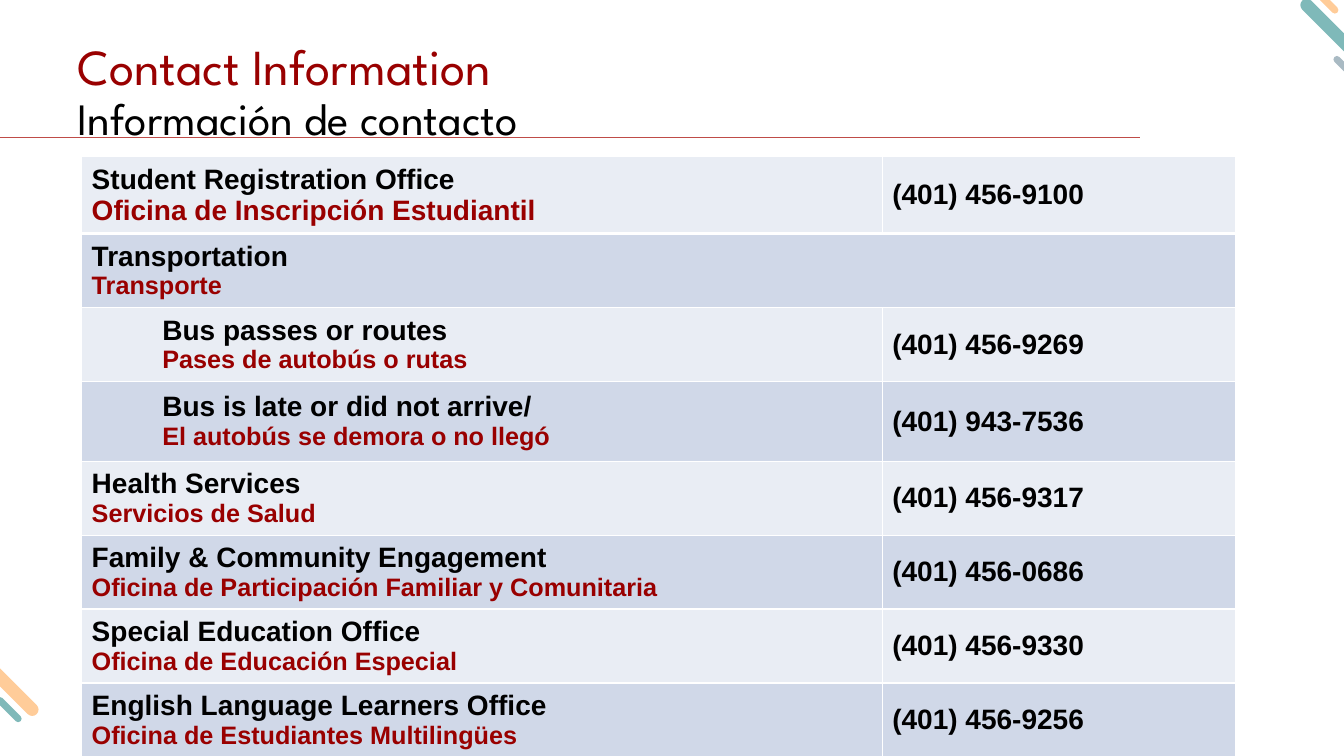
import pptx
import pptx.util
import pptx.dml.color
import pptx.enum.shapes
import pptx.enum.text
import pptx.oxml
import pptx.oxml.ns
from dataclasses import dataclass
from lxml import etree

Inches, Pt = pptx.util.Inches, pptx.util.Pt
qn = pptx.oxml.ns.qn


@dataclass(frozen=True)
class Theme:
    heading_font: str = "League Spartan"
    body_font: str = "Arial"
    black: str = "000000"
    red: str = "990000"
    rule: str = "BF4C48"
    teal: str = "7FB9B9"
    peach: str = "FFCC99"
    gray: str = "A9BAC3"
    white: str = "FFFFFF"
    bands: tuple = ("E9EDF4", "D0D8E8")
    title: int = 36
    subtitle: int = 32
    body: int = 20
    translation: int = 18


THEME = Theme()

# English, Spanish, phone (None spans both columns), indented
CONTACTS = [
    ("Student Registration Office", "Oficina de Inscripción Estudiantil", "(401) 456-9100", False),
    ("Transportation", "Transporte", None, False),
    ("Bus passes or routes", "Pases de autobús o rutas", "(401) 456-9269", True),
    ("Bus is late or did not arrive/", "El autobús se demora o no llegó", "(401) 943-7536", True),
    ("Health Services", "Servicios de Salud", "(401) 456-9317", False),
    ("Family & Community Engagement", "Oficina de Participación Familiar y Comunitaria",
     "(401) 456-0686", False),
    ("Special Education Office", "Oficina de Educación Especial", "(401) 456-9330", False),
    ("English Language Learners Office", "Oficina de Estudiantes Multilingües",
     "(401) 456-9256", False),
]
ROW_HEIGHT = 0.69
SPECIAL_HEIGHTS = {0: 0.72, 3: 0.79}


def rgb(value):
    return pptx.dml.color.RGBColor.from_string(value)


def set_font(font, name, size, color, bold=False):
    font.name, font.size, font.bold = name, Pt(size), bold
    font.color.rgb = rgb(color)


def add_line(slide, start, end, color, width, round_cap=False):
    connector = slide.shapes.add_connector(
        pptx.enum.shapes.MSO_CONNECTOR.STRAIGHT, *map(Inches, (*start, *end)))
    connector.line.color.rgb = rgb(color)
    connector.line.width = Pt(width)
    if round_cap:
        connector.line._get_or_add_ln().set("cap", "rnd")
    etree.SubElement(connector._element.spPr, qn("a:effectLst"))


def add_corner_stripes(slide, left, top, stripes):
    """Draw diagonal stripes, given as offset x, offset y, length, colour and width."""
    for x, y, length, color, width in stripes:
        start = (left + x, top + y)
        end = (start[0] + length, start[1] + length)
        add_line(slide, start, end, color, width, round_cap=True)


def add_title(slide, left, top, width, height):
    box = slide.shapes.add_textbox(*map(Inches, (left, top, width, height)))
    frame = box.text_frame
    frame.word_wrap = True
    frame.vertical_anchor = pptx.enum.text.MSO_ANCHOR.MIDDLE
    frame.margin_left = frame.margin_right = Inches(0.1)
    frame.margin_top = frame.margin_bottom = Inches(0.1)
    paragraph = frame.paragraphs[0]
    paragraph.line_spacing = 0.9
    english = paragraph.add_run()
    english.text = "Contact Information"
    set_font(english.font, THEME.heading_font, THEME.title, THEME.red)
    paragraph.add_line_break()
    spanish = paragraph.add_run()
    spanish.text = "Información de contacto"
    set_font(spanish.font, THEME.heading_font, THEME.subtitle, THEME.black)


def style_cell(cell, fill, bottom_width):
    cell.fill.solid()
    cell.fill.fore_color.rgb = rgb(fill)
    cell.vertical_anchor = pptx.enum.text.MSO_ANCHOR.MIDDLE
    properties = cell._tc.get_or_add_tcPr()
    for index, side in enumerate("LRTB"):
        border = etree.Element(qn(f"a:ln{side}"))
        border.set("w", str(Pt(bottom_width if side == "B" else 1)))
        solid = etree.SubElement(border, qn("a:solidFill"))
        etree.SubElement(solid, qn("a:srgbClr")).set("val", THEME.white)
        properties.insert(index, border)


def fill_cell(cell, lines):
    frame = cell.text_frame
    for index, (text, size, color) in enumerate(lines):
        paragraph = frame.add_paragraph() if index else frame.paragraphs[0]
        paragraph.text = text
        set_font(paragraph.font, THEME.body_font, size, color, bold=True)


def add_contact_table(slide, left, top, width, phone_width):
    heights = [SPECIAL_HEIGHTS.get(row, ROW_HEIGHT) for row in range(len(CONTACTS))]
    table = slide.shapes.add_table(
        len(CONTACTS), 2, *map(Inches, (left, top, width, sum(heights)))).table
    table.first_row = table.horz_banding = False
    table.columns[0].width = Inches(width - phone_width)
    table.columns[1].width = Inches(phone_width)
    for row, (english, spanish, phone, indented) in enumerate(CONTACTS):
        table.rows[row].height = Inches(heights[row])
        office, number = table.cell(row, 0), table.cell(row, 1)
        for cell in (office, number):
            style_cell(cell, THEME.bands[row % 2], 1 if row else 3)
        if indented:
            office.margin_left = Inches(0.8)
        fill_cell(office, [
            (english, THEME.body, THEME.black),
            (spanish, THEME.translation if row else THEME.body, THEME.red)])
        if phone:
            fill_cell(number, [(phone, THEME.body, THEME.black)])
        else:
            office.merge(number)


def build_contact_slide(presentation):
    slide = presentation.slides.add_slide(presentation.slide_layouts[6])
    # Corner decoration
    add_corner_stripes(slide, -0.15, 6.57, [
        (0, 0, 0.47, THEME.peach, 9),
        (0.15, 0.38, 0.18, THEME.teal, 5)])
    add_corner_stripes(slide, 12.92, -0.22, [
        (0.04, 0.27, 0.53, THEME.teal, 9),
        (0, 0, 0.32, THEME.peach, 5),
        (0.34, 0.81, 0.22, THEME.gray, 5)])
    # Heading and its rule
    add_line(slide, (0, 1.36), (11.31, 1.36), THEME.rule, 0.75)
    add_title(slide, 0.67, 0.3, 12, 1.25)
    # Phone directory
    add_contact_table(slide, 0.81, 1.55, 11.45, 3.51)


def main():
    presentation = pptx.Presentation()
    presentation.slide_width = Inches(13.33)
    presentation.slide_height = Inches(7.5)
    build_contact_slide(presentation)
    presentation.save("out.pptx")


if __name__ == "__main__":
    main()
